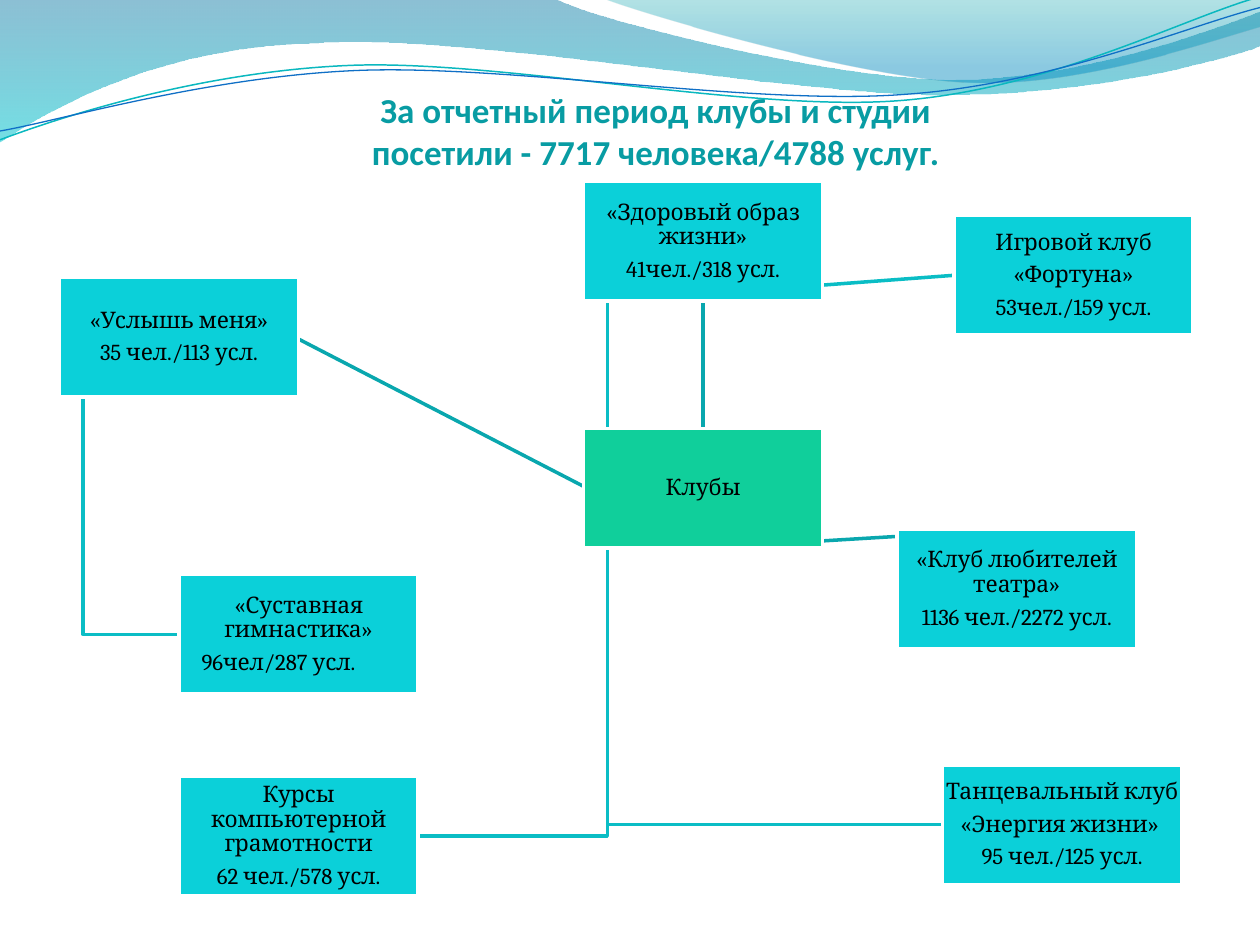
"""Build a slide mapping the clubs and their visitor counts."""
from lxml.etree import SubElement
from pptx import Presentation
from pptx.dml.color import RGBColor
from pptx.enum.shapes import MSO_SHAPE
from pptx.enum.text import MSO_ANCHOR as ANCHOR, PP_ALIGN as ALIGN
from pptx.oxml.ns import qn
from pptx.util import Inches, Pt

BOX_W, BOX_H, STEM = 1.9, 0.95, 0.19
HUB, CLUB, BRANCH, LINK = "10CF9B", "0BD0D9", "0ABDC5", "09A7AE"
CLUBS = {
    "hub": (4.63, 3.4, ["Клубы"]),
    "hear": (0.47, 2.2, ["«Услышь меня»", "35 чел./113 усл."]),
    "joints": (1.42, 4.56, ["«Суставная гимнастика»", "96чел/287 усл."]),
    "theatre": (7.12, 4.2, ["«Клуб любителей театра»", "1136 чел./2272 усл."]),
    "health": (4.63, 1.44, ["«Здоровый образ жизни»", "41чел./318 усл."]),
    "games": (7.57, 1.71, ["Игровой клуб", "«Фортуна»", "53чел./159 усл."]),
    "dance": (7.48, 6.07, ["Танцевальный клуб", "«Энергия жизни» ", "95 чел./125 усл."]),
    "courses": (1.42, 6.16, ["Курсы компьютерной грамотности", "62 чел./578 усл."]),
}
WAVE_LEFT = [
    (0, 0), (4.4, -0.01),
    (4.76, 0.17, 6.64, 0.63, 7.58, 0.63), (8.53, 0.63, 9.58, 0.26, 10, 0.09),
    (10.01, 0.36),
    (9.83, 0.44, 8.7, 0.76, 7.46, 0.75), (6.22, 0.75, 3.82, 0.28, 2.57, 0.34),
    (1.29, 0.36, 0.46, 0.83, -0.01, 1.13),
]
WAVE_RIGHT = [
    (4.79, -0.01), (5.09, 0.11, 6.82, 0.62, 7.69, 0.65),
    (8.56, 0.69, 9.61, 0.32, 10, 0.21), (10, 0),
]
CURVE_TEAL = [
    (0, 1.11), (0.48, 0.93, 1.58, 0.57, 2.77, 0.52),
    (3.95, 0.47, 5.93, 0.89, 7.13, 0.8), (8.33, 0.71, 9.38, 0.15, 9.98, -0.02),
]
CURVE_BLUE = [
    (0, 1.04), (0.47, 0.96, 1.64, 0.61, 2.83, 0.56),
    (4.03, 0.51, 5.97, 0.84, 7.17, 0.75), (8.36, 0.67, 9.41, 0.21, 10, 0.06),
]


def rgb(value):
    return RGBColor.from_string(value)


class Deck:
    def __init__(self):
        self.prs = Presentation()
        self.prs.slide_width, self.prs.slide_height = Inches(10), Inches(7.5)
        self.s = self.prs.slides.add_slide(self.prs.slide_layouts[5])

    def style(self, p, size, color, font, bold=False):
        p.alignment = ALIGN.CENTER
        for r in p.runs:
            r.font.size, r.font.name, r.font.bold = Pt(size), font, bold
            r.font.color.rgb = rgb(color)

    def title(self, text):
        sp = self.s.shapes.title
        sp.left, sp.top, sp.width, sp.height = map(Inches, (0.78, 0.62, 8.92, 1.08))
        tf = sp.text_frame
        tf.text = text
        tf.vertical_anchor = ANCHOR.BOTTOM
        tf.margin_left, tf.margin_top = 0, Inches(0.05)
        tf.margin_right, tf.margin_bottom = Inches(0.07), Inches(0.33)
        self.style(tf.paragraphs[0], 20, "089CA3", "Calibri", True)

    def outline(self, segments, close=False):
        ends = [(Inches(seg[-2]), Inches(seg[-1])) for seg in segments]
        builder = self.s.shapes.build_freeform(*ends[0])
        builder.add_line_segments(ends[1:], close=close)
        sp = builder.convert_to_shape()
        sp.shadow.inherit = False
        for seg, node in zip(segments, list(next(sp._element.iter(qn("a:path"))))):
            if len(seg) == 6:
                node.tag = qn("a:cubicBezTo")
                for i in (0, 2):
                    x, y = Inches(seg[i]) - sp.left, Inches(seg[i + 1]) - sp.top
                    node.insert(i // 2, node.makeelement(qn("a:pt"), {"x": str(x), "y": str(y)}))
        return sp

    def wave(self, segments, *stops):
        sp = self.outline(segments, close=True)
        sp.line.fill.background()
        sp.fill.gradient()
        sp.fill.gradient_angle = 270
        for stop, (position, color, _) in zip(sp.fill.gradient_stops, stops):
            stop.position = position
            stop.color.rgb = rgb(color)
        for node, (_, _, opacity) in zip(sp._element.spPr.iter(qn("a:srgbClr")), stops):
            SubElement(node, qn("a:alpha"), val=str(opacity * 1000))

    def curve(self, segments, color, width=2):
        sp = self.outline(segments)
        sp.fill.background()
        sp.line.color.rgb, sp.line.width = rgb(color), Pt(width)
        if sp.width == 0:
            self.widen(sp, Inches(0.1))

    def widen(self, sp, width):
        sp.left, sp.width = sp.left - width // 2, width
        next(sp._element.iter(qn("a:path"))).set("w", str(width))
        for pt in sp._element.iter(qn("a:pt")):
            pt.set("x", str(width // 2))

    def spoke(self, child):
        (hx, hy, _), (x, y, _) = CLUBS["hub"], CLUBS[child]
        self.curve([(hx + BOX_W / 2, hy + BOX_H), (x + BOX_W / 2, y)], LINK)

    def branch(self, parent, child, bend=True):
        (px, py, _), (x, y, _) = CLUBS[parent], CLUBS[child]
        stem, middle = px + STEM, y + BOX_H / 2
        end = x if x > stem else x + BOX_W
        corner = [(stem, middle)] if bend else []
        self.curve([(stem, py + BOX_H), *corner, (end, middle)], BRANCH)

    def box(self, x, y, lines, color):
        sp = self.s.shapes.add_shape(MSO_SHAPE.RECTANGLE, *map(Inches, (x, y, BOX_W, BOX_H)))
        sp.shadow.inherit = False
        sp.fill.solid()
        sp.fill.fore_color.rgb = rgb(color)
        sp.line.color.rgb, sp.line.width = rgb("FFFFFF"), Pt(2)
        tf = sp.text_frame
        tf.text = "\n".join(lines)
        tf.word_wrap, tf.vertical_anchor = True, ANCHOR.MIDDLE
        tf.margin_left = tf.margin_right = tf.margin_top = tf.margin_bottom = Inches(0.01)
        for p in tf.paragraphs:
            self.style(p, 13, "000000", "Cambria")
            p.line_spacing, p.space_after = 0.9, Pt(4.6)
        return tf

    def indent(self, p, left):
        p.alignment = ALIGN.LEFT
        p._p.get_or_add_pPr().set("marL", str(Inches(left)))


def main():
    deck = Deck()
    deck.wave(WAVE_LEFT, (0, "0074A1", 45), (1, "00C6CF", 55))
    deck.wave(WAVE_RIGHT, (0, "00A1A9", 30), (0.8, "008BBF", 45))
    deck.curve(CURVE_TEAL, "0AB8BF", 0.85)
    deck.curve(CURVE_BLUE, "0F6FC6", 0.75)
    deck.title("За отчетный период клубы и студии\vпосетили - 7717 человека/4788 услуг.")
    deck.branch("health", "courses")
    deck.branch("health", "dance")
    deck.branch("health", "games", bend=False)
    deck.branch("hear", "joints")
    for child in ("health", "theatre", "hear"):
        deck.spoke(child)
    for name, (x, y, lines) in CLUBS.items():
        tf = deck.box(x, y, lines, HUB if name == "hub" else CLUB)
        if name == "joints":
            deck.indent(tf.paragraphs[1], 0.17)
    deck.prs.save("out.pptx")


if __name__ == "__main__":
    main()
